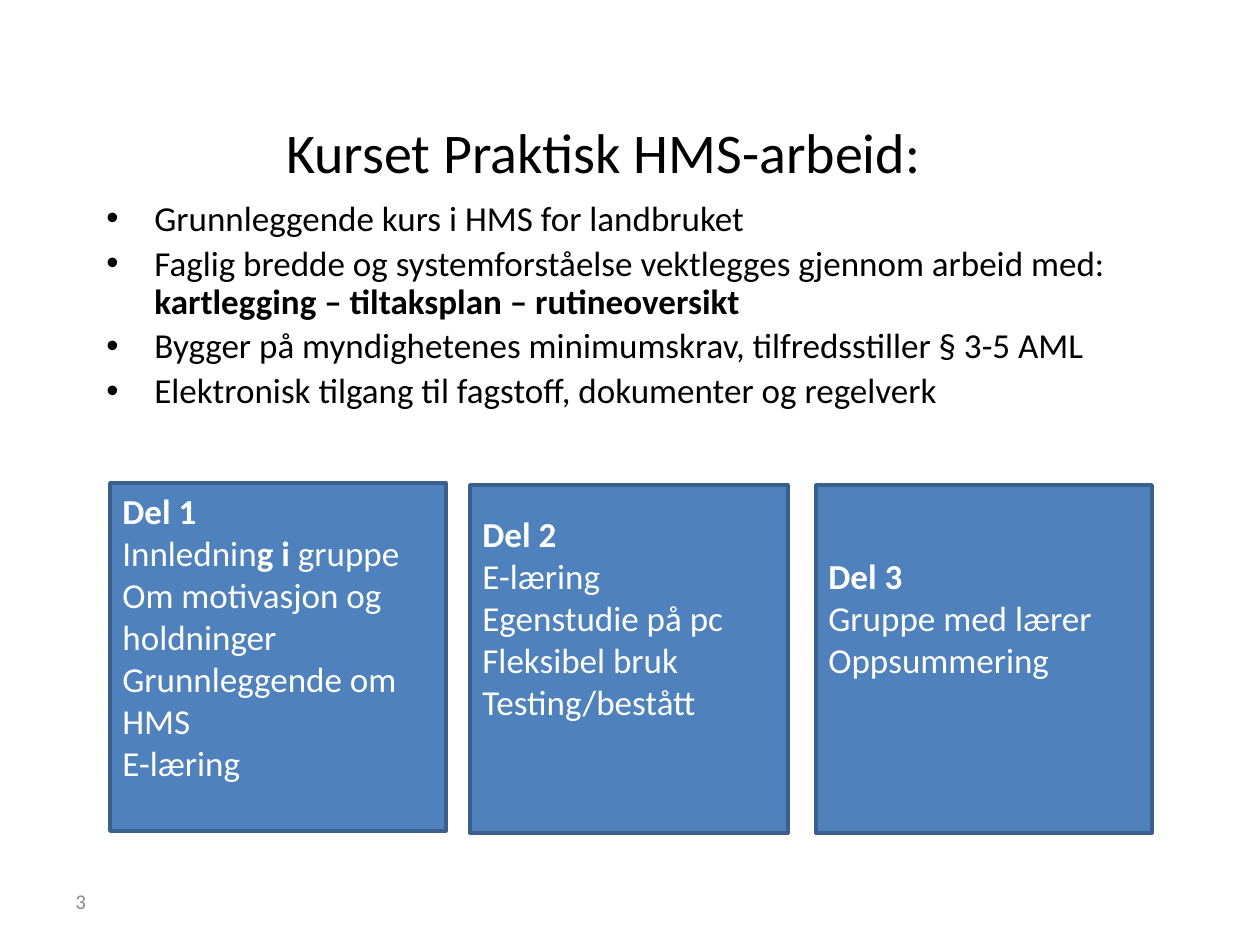
"""Build the slide that presents the three parts of the course Praktisk HMS-arbeid."""

from dataclasses import dataclass
from typing import Any

import pptx
import pptx.dml.color
import pptx.enum.shapes
import pptx.enum.text
import pptx.oxml.xmlchemy
import pptx.util
from lxml import etree
from pptx.oxml import ns

PX_PER_INCH = 126
EMU_PER_PX = 914400 / PX_PER_INCH
MIDDLE = pptx.enum.text.MSO_ANCHOR.MIDDLE
TOP = pptx.enum.text.MSO_ANCHOR.TOP
LEFT = pptx.enum.text.PP_ALIGN.LEFT
CENTER = pptx.enum.text.PP_ALIGN.CENTER


@dataclass(frozen=True)
class Theme:
    """Colours, type sizes and the font of the slide."""

    font: str = "Calibri"
    text: str = "000000"
    muted: str = "8C8C8C"
    card_text: str = "FFFFFF"
    card_fill: str = "4F81BD"
    card_line: str = "3A5F8C"
    title_size: int = 32
    body_size: int = 20
    number_size: int = 12
    line_width: int = 2


@dataclass(frozen=True)
class Box:
    """A rectangle in px."""

    left: int
    top: int
    width: int
    height: int


@dataclass(frozen=True)
class Run:
    """A piece of text with one weight."""

    text: str
    bold: bool = False


@dataclass(frozen=True)
class Card:
    """One part of the course, with the number of lines kept free below its text."""

    box: Box
    lines: tuple[tuple[Run, ...], ...]
    free_lines: int


THEME = Theme()
LINE_HEIGHT = 42
INSET = 6
BULLET_INDENT = 48
CARD_HEIGHT = 348


def plain(*texts: str) -> tuple[tuple[Run, ...], ...]:
    """Return one regular line for each text."""
    return tuple((Run(text),) for text in texts)


def heading(text: str) -> tuple[Run, ...]:
    """Return a bold line."""
    return (Run(text, True),)


BULLETS = (
    *plain("Grunnleggende kurs i HMS for landbruket"),
    (
        Run("Faglig bredde og systemforståelse vektlegges gjennom arbeid med: "),
        Run("kartlegging – tiltaksplan – rutineoversikt", True),
    ),
    *plain(
        "Bygger på myndighetenes minimumskrav, tilfredsstiller § 3-5 AML",
        "Elektronisk tilgang til fagstoff, dokumenter og regelverk",
    ),
)

CARDS = (
    Card(
        Box(110, 483, 336, CARD_HEIGHT),
        (
            heading("Del 1"),
            (Run("Innlednin"), Run("g i ", True), Run("gruppe")),
            *plain("Om motivasjon og", "holdninger", "Grunnleggende om", "HMS", "E-læring"),
        ),
        1,
    ),
    Card(
        Box(470, 485, 318, CARD_HEIGHT),
        (
            heading("Del 2"),
            *plain("E-læring", "Egenstudie på pc", "Fleksibel bruk", "Testing/bestått"),
        ),
        2,
    ),
    Card(
        Box(816, 485, 336, CARD_HEIGHT),
        (heading("Del 3"), *plain("Gruppe med lærer", "Oppsummering")),
        2,
    ),
)


def px(length: int) -> pptx.util.Emu:
    """Turn px into EMU."""
    return pptx.util.Emu(round(length * EMU_PER_PX))


def place(box: Box) -> tuple[pptx.util.Emu, ...]:
    """Return the position and size of a box in EMU."""
    return px(box.left), px(box.top), px(box.width), px(box.height)


def rgb(value: str) -> pptx.dml.color.RGBColor:
    """Turn a hex value into a colour."""
    return pptx.dml.color.RGBColor.from_string(value)


def apply(target: Any, values: dict[str, Any]) -> None:
    """Set every format value on the target."""
    for name, value in values.items():
        setattr(target, name, value)


def add_bullet(paragraph: Any) -> None:
    """Give a paragraph a hanging bullet."""
    properties = paragraph._p.get_or_add_pPr()
    properties.set("marL", str(px(BULLET_INDENT)))
    properties.set("indent", str(-px(BULLET_INDENT)))
    etree.SubElement(properties, ns.qn("a:buFont")).set("typeface", "Arial")
    etree.SubElement(properties, ns.qn("a:buChar")).set("char", "•")


def write(
    shape: Any,
    lines: tuple[tuple[Run, ...], ...],
    size: int,
    color: str,
    anchor: Any = MIDDLE,
    alignment: Any = LEFT,
    free_lines: int = 0,
    bulleted: bool = False,
) -> None:
    """Fill a shape with formatted lines."""
    frame = shape.text_frame
    apply(frame, {
        "word_wrap": True,
        "vertical_anchor": anchor,
        "margin_bottom": px(INSET + free_lines * LINE_HEIGHT),
    })
    for index, line in enumerate(lines):
        paragraph = frame.add_paragraph() if index else frame.paragraphs[0]
        paragraph.alignment = alignment
        if bulleted:
            add_bullet(paragraph)
            paragraph.line_spacing = 0.9
            paragraph.space_before = pptx.util.Pt(size / 5 if index else 0)
        for piece in line:
            run = paragraph.add_run()
            run.text = piece.text
            apply(run.font, {"name": THEME.font, "size": pptx.util.Pt(size), "bold": piece.bold})
            run.font.color.rgb = rgb(color)


def add_card(slide: Any, card: Card) -> None:
    """Draw one part of the course."""
    shape = slide.shapes.add_shape(pptx.enum.shapes.MSO_SHAPE.RECTANGLE, *place(card.box))
    shape.shadow.inherit = False
    shape.fill.solid()
    shape.fill.fore_color.rgb = rgb(THEME.card_fill)
    shape.line.color.rgb = rgb(THEME.card_line)
    shape.line.width = pptx.util.Pt(THEME.line_width)
    write(shape, card.lines, THEME.body_size, THEME.card_text, free_lines=card.free_lines)


def main() -> None:
    """Build and save the presentation."""
    presentation = pptx.Presentation()
    apply(presentation, {"slide_width": px(1260), "slide_height": px(945)})
    slide = presentation.slides.add_slide(presentation.slide_layouts[6])
    title = slide.shapes.add_textbox(*place(Box(68, 98, 1071, 105)))
    write(title, plain("Kurset Praktisk HMS-arbeid:"), THEME.title_size, THEME.text, alignment=CENTER)
    body = slide.shapes.add_textbox(*place(Box(94, 195, 1071, 416)))
    write(body, BULLETS, THEME.body_size, THEME.text, anchor=TOP, bulleted=True)
    number = slide.shapes.add_textbox(*place(Box(63, 876, 294, 50)))
    write(number, plain("3"), THEME.number_size, THEME.muted)
    for card in CARDS:
        add_card(slide, card)
    presentation.save("out.pptx")


if __name__ == "__main__":
    main()
